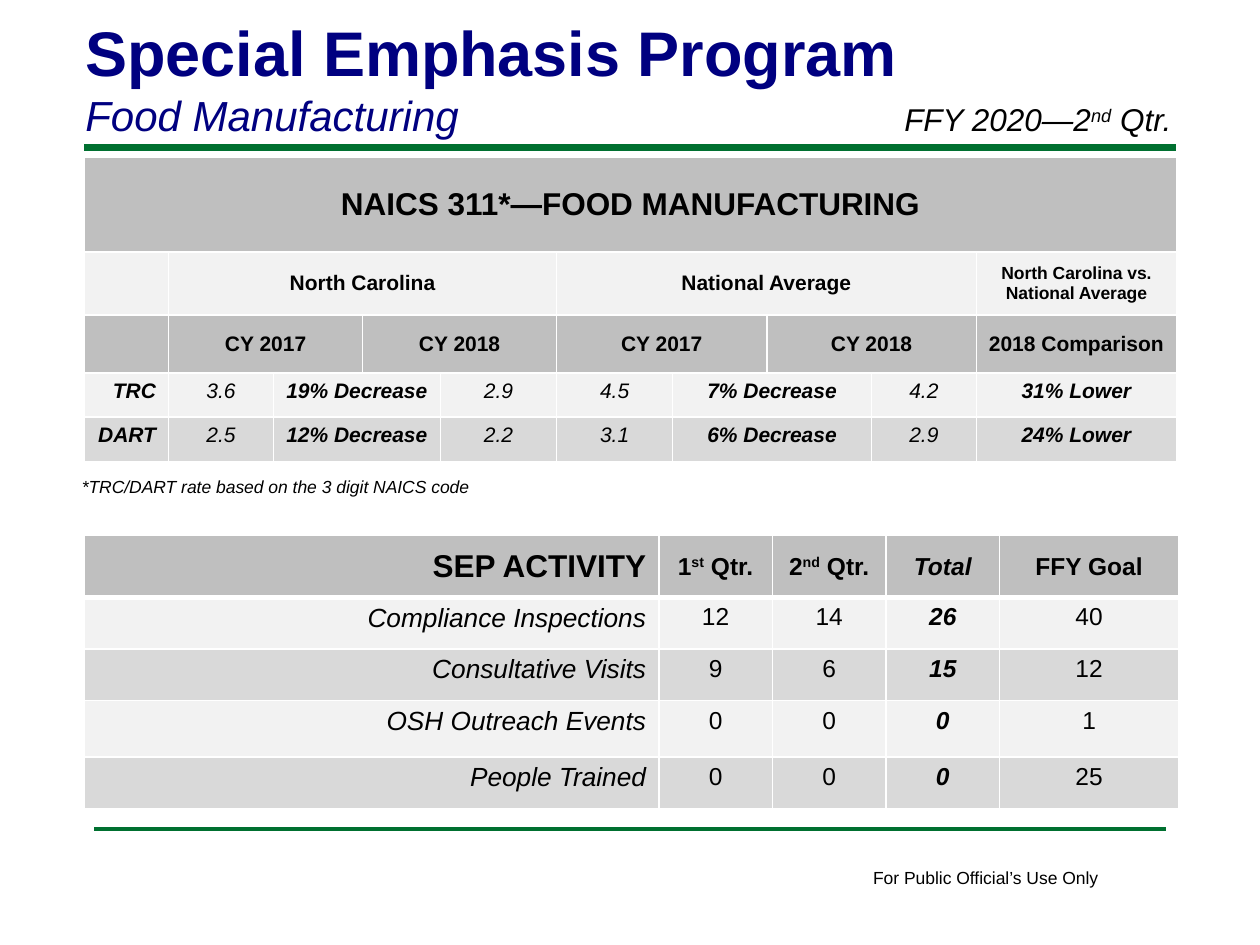
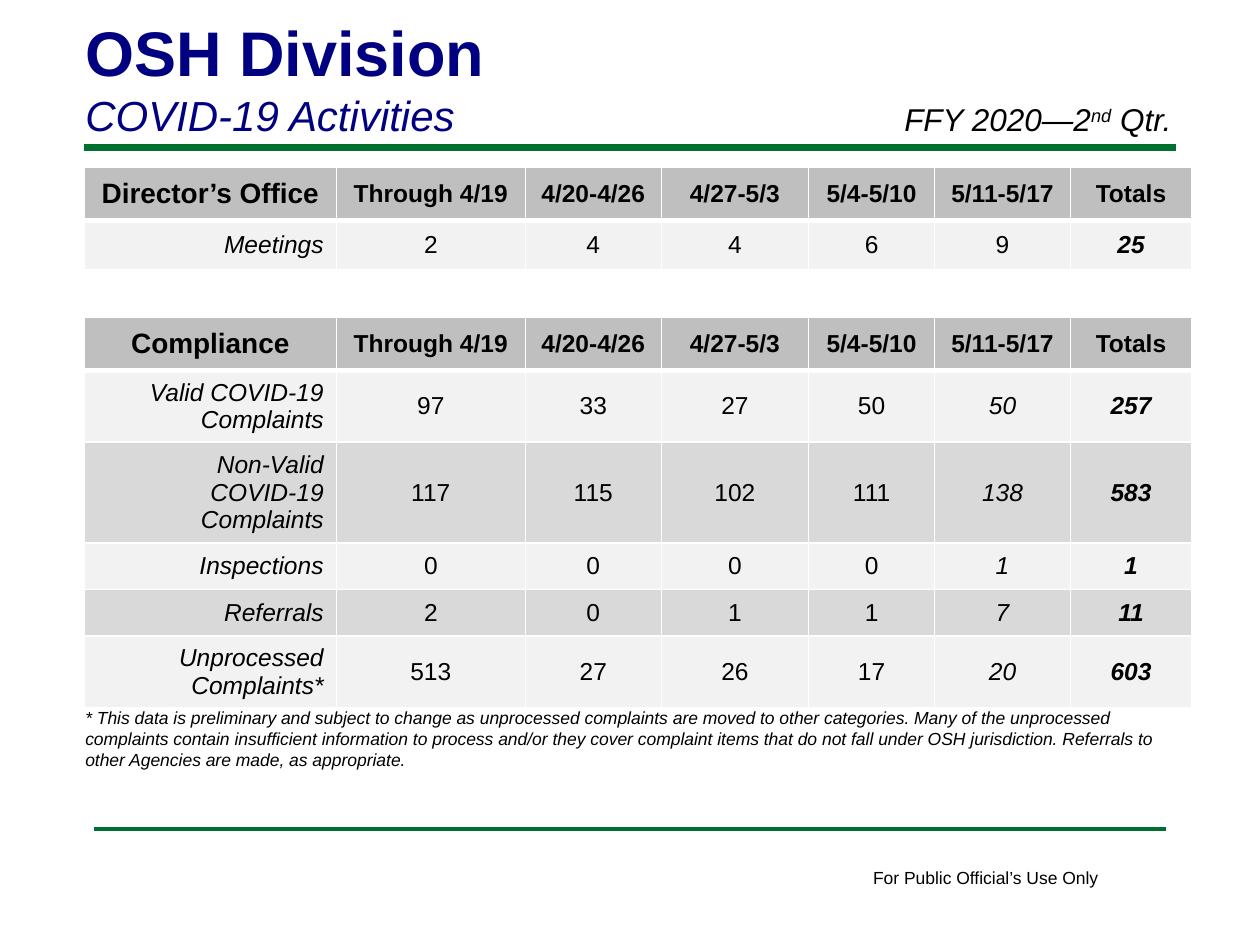
from dataclasses import dataclass
from typing import NamedTuple

from lxml import etree
from pptx import Presentation
from pptx.dml.color import RGBColor
from pptx.enum.shapes import MSO_CONNECTOR
from pptx.enum.text import MSO_ANCHOR, MSO_AUTO_SIZE, PP_ALIGN
from pptx.oxml.ns import qn
from pptx.util import Cm, Pt

LEFT, CENTER, RIGHT = PP_ALIGN.LEFT, PP_ALIGN.CENTER, PP_ALIGN.RIGHT
TOP, MIDDLE = MSO_ANCHOR.TOP, MSO_ANCHOR.MIDDLE
STRAIGHT = MSO_CONNECTOR.STRAIGHT
FIT_SHAPE = MSO_AUTO_SIZE.SHAPE_TO_FIT_TEXT

FONT = "Arial"
COLORS = {
    "ink": "000000",
    "title": "000080",
    "rule": "007030",
    "border": "FFFFFF",
    "header": "BFBFBF",
    "light": "F2F2F2",
    "dark": "D9D9D9",
}
TABLE_LEFT = 1.7


class Style(NamedTuple):
    size: float
    bold: bool = False
    italic: bool = False
    align: PP_ALIGN = LEFT
    anchor: MSO_ANCHOR = TOP
    color: str = "ink"


class Line(NamedTuple):
    """A paragraph; text between carets is superscript."""
    text: str
    style: Style


class Cell(NamedTuple):
    text: str
    style: Style
    span: int = 1


class Rule(NamedTuple):
    left: float
    right: float
    top: float
    weight: float


@dataclass
class TextBox:
    left: float
    top: float
    width: float
    height: float
    lines: list[Line]
    wrap: bool = True


@dataclass
class Grid:
    top: float
    widths: list[float]
    heights: list[float]
    fills: list[str]
    rows: list[list[Cell]]
    header_border: float = 3


# Text styles
TITLE = Style(36, bold=True, color="title")
SUBTITLE = Style(24, italic=True, color="title")
QUARTER = Style(18, italic=True)
NOTE = Style(10, italic=True)
FOOTER = Style(10)
BANNER = Style(18, bold=True, align=CENTER, anchor=MIDDLE)
GROUP = Style(12, bold=True, align=CENTER, anchor=MIDDLE)
COMPARISON = GROUP._replace(size=10)
RATE = Style(12, italic=True, align=CENTER)
CHANGE = RATE._replace(bold=True)
RATE_LABEL = CHANGE._replace(align=RIGHT)
COLUMN = Style(14, bold=True, align=CENTER, anchor=MIDDLE)
COLUMN_TOTAL = COLUMN._replace(italic=True)
ACTIVITY_HEADER = BANNER._replace(align=RIGHT)
ACTIVITY = Style(15, italic=True, align=RIGHT)
COUNT = Style(14, align=CENTER)
TOTAL = COUNT._replace(bold=True, italic=True)
OFFICE = COLUMN._replace(size=16)
COVID_LABEL = Style(14, italic=True, align=RIGHT, anchor=MIDDLE)
COVID_COUNT = COUNT._replace(anchor=MIDDLE)
COVID_LATEST = COVID_COUNT._replace(italic=True)
COVID_TOTAL = TOTAL._replace(anchor=MIDDLE)

# Parts shared by the slides
RULES = [Rule(1.7, 23.7, 2.97, 4), Rule(1.9, 23.5, 16.71, 2)]
FOOTER_BOX = TextBox(17.35, 17.35, 5.11, 0.69,
                     [Line("For Public Official’s Use Only", FOOTER)], wrap=False)
QUARTER_BOX = TextBox(17.98, 1.9, 6.35, 1.02,
                      [Line("FFY 2020—2^nd^ Qtr.", QUARTER)])


def rgb(name: str) -> RGBColor:
    return RGBColor.from_string(COLORS[name])


def write_line(paragraph, line: Line) -> None:
    style = line.style
    paragraph.alignment = style.align
    for index, piece in enumerate(line.text.split("^")):
        run = paragraph.add_run()
        run.text = piece
        font = run.font
        font.name, font.size = FONT, Pt(style.size)
        font.bold, font.italic = style.bold, style.italic
        font.color.rgb = rgb(style.color)
        if index % 2:
            run._r.get_or_add_rPr().set("baseline", "30000")


def draw_text(slide, box: TextBox) -> None:
    shape = slide.shapes.add_textbox(
        Cm(box.left), Cm(box.top), Cm(box.width), Cm(box.height))
    frame = shape.text_frame
    frame.word_wrap = box.wrap
    frame.auto_size = FIT_SHAPE
    for index, line in enumerate(box.lines):
        paragraph = frame.add_paragraph() if index else frame.paragraphs[0]
        write_line(paragraph, line)


def draw_rule(slide, rule: Rule) -> None:
    connector = slide.shapes.add_connector(
        STRAIGHT, Cm(rule.left), Cm(rule.top), Cm(rule.right), Cm(rule.top))
    connector.line.color.rgb = rgb("rule")
    connector.line.width = Pt(rule.weight)
    etree.SubElement(connector._element.spPr, qn("a:effectLst"))


def set_borders(table_cell, bottom: float) -> None:
    properties = table_cell._tc.get_or_add_tcPr()
    for side, weight in (("L", 1), ("R", 1), ("T", 1), ("B", bottom)):
        border = etree.SubElement(properties, qn(f"a:ln{side}"), w=str(Pt(weight)))
        fill = etree.SubElement(border, qn("a:solidFill"))
        etree.SubElement(fill, qn("a:srgbClr"), val=COLORS["border"])


def draw_grid(slide, grid: Grid) -> None:
    table = slide.shapes.add_table(
        len(grid.heights), len(grid.widths), Cm(TABLE_LEFT), Cm(grid.top),
        Cm(sum(grid.widths)), Cm(sum(grid.heights))).table
    table.first_row = table.horz_banding = False
    for column, width in zip(table.columns, grid.widths):
        column.width = Cm(width)
    for row_index, cells in enumerate(grid.rows):
        row = table.rows[row_index]
        row.height = Cm(grid.heights[row_index])
        for table_cell in row.cells:
            set_borders(table_cell, 1 if row_index else grid.header_border)
            table_cell.fill.solid()
            table_cell.fill.fore_color.rgb = rgb(grid.fills[row_index])
        start = 0
        for cell in cells:
            table_cell = table.cell(row_index, start)
            if cell.span > 1:
                table_cell.merge(table.cell(row_index, start + cell.span - 1))
            if cell.text:
                table_cell.vertical_anchor = cell.style.anchor
                write_line(table_cell.text_frame.paragraphs[0],
                           Line(cell.text, cell.style))
            start += cell.span


def styled_row(texts: list[str], styles: list[Style]) -> list[Cell]:
    return [Cell(text, style) for text, style in zip(texts, styles)]


def banded(count: int) -> list[str]:
    return ["header"] + [("light", "dark")[i % 2] for i in range(count)]


def add_slide(presentation, title: str, subtitle: str):
    slide = presentation.slides.add_slide(presentation.slide_layouts[6])
    for rule in RULES:
        draw_rule(slide, rule)
    heading = TextBox(1.47, 0.15, 20.96, 2.82,
                      [Line(title, TITLE), Line(subtitle, SUBTITLE)])
    for box in (FOOTER_BOX, heading, QUARTER_BOX):
        draw_text(slide, box)
    return slide


# Food manufacturing tables
def rate_row(label: str, state: list[str], nation: list[str], versus: str) -> list[Cell]:
    cells = [Cell(label, RATE_LABEL)]
    for before, change, after in (state, nation):
        cells += [Cell(before, RATE), Cell(change, CHANGE, 2), Cell(after, RATE)]
    return cells + [Cell(versus, CHANGE)]


def activity_grid() -> Grid:
    header = styled_row(
        ["SEP ACTIVITY", "1^st^ Qtr.", "2^nd^ Qtr.", "Total", "FFY Goal"],
        [ACTIVITY_HEADER, COLUMN, COLUMN, COLUMN_TOTAL, COLUMN])
    activities = [
        ["Compliance Inspections", "12", "14", "26", "40"],
        ["Consultative Visits", "9", "6", "15", "12"],
        ["OSH Outreach Events", "0", "0", "0", "1"],
        ["People Trained", "0", "0", "0", "25"],
    ]
    styles = [ACTIVITY, COUNT, COUNT, TOTAL, COUNT]
    return Grid(10.8, [11.58, 2.29, 2.29, 2.29, 3.61],
                [1.24, 1.04, 1.04, 1.14, 1.04], banded(len(activities)),
                [header] + [styled_row(texts, styles) for texts in activities])


def rate_grid() -> Grid:
    years = [Cell(year, GROUP, 2) for year in ("CY 2017", "CY 2018")]
    rows = [
        [Cell("NAICS 311*—FOOD MANUFACTURING", BANNER, 10)],
        [Cell("", GROUP), Cell("North Carolina", GROUP, 4),
         Cell("National Average", GROUP, 4),
         Cell("North Carolina vs. National Average", COMPARISON)],
        [Cell("", GROUP), *years, *years, Cell("2018 Comparison", GROUP)],
        rate_row("TRC", ["3.6", "19% Decrease", "2.9"],
                 ["4.5", "7% Decrease", "4.2"], "31% Lower"),
        rate_row("DART", ["2.5", "12% Decrease", "2.2"],
                 ["3.1", "6% Decrease", "2.9"], "24% Lower"),
    ]
    return Grid(3.18, [1.7, 2.11, 1.8, 1.57, 2.34, 2.34, 1.9, 2.11, 2.11, 4.04],
                [1.9, 1.27, 1.17, 0.89, 0.89],
                ["header", "light", "header", "light", "dark"], rows,
                header_border=1)


# Weekly COVID-19 tables
def weekly_grid(top: float, office: str, latest: Style, data: list[list[str]]) -> Grid:
    header = styled_row(
        [office, "Through 4/19", "4/20-4/26", "4/27-5/3", "5/4-5/10",
         "5/11-5/17", "Totals"], [OFFICE] + [COLUMN] * 6)
    styles = [COVID_LABEL] + [COVID_COUNT] * 4 + [latest, COVID_TOTAL]
    return Grid(top, [5.08, 3.81, 2.74, 2.97, 2.54, 2.74, 2.44],
                [1.07, 0.99] + [0.94] * (len(data) - 1), banded(len(data)),
                [header] + [styled_row(texts, styles) for texts in data])


def main() -> None:
    presentation = Presentation()
    presentation.slide_width, presentation.slide_height = Cm(25.4), Cm(19.05)

    # Slide 1: food manufacturing
    slide = add_slide(presentation, "Special Emphasis Program", "Food Manufacturing")
    draw_text(slide, TextBox(
        1.4, 9.47, 8.59, 0.69,
        [Line("*TRC/DART rate based on the 3 digit NAICS code", NOTE)], wrap=False))
    draw_grid(slide, activity_grid())
    draw_grid(slide, rate_grid())

    # Slide 2: COVID-19 activities
    slide = add_slide(presentation, "OSH Division", "COVID-19 Activities")
    draw_grid(slide, weekly_grid(3.38, "Director’s Office", COVID_COUNT, [
        ["Meetings", "2", "4", "4", "6", "9", "25"],
    ]))
    draw_grid(slide, weekly_grid(6.4, "Compliance", COVID_LATEST, [
        ["Valid COVID-19 Complaints", "97", "33", "27", "50", "50", "257"],
        ["Non-Valid COVID-19 Complaints", "117", "115", "102", "111", "138", "583"],
        ["Inspections", "0", "0", "0", "0", "1", "1"],
        ["Referrals", "2", "0", "1", "1", "7", "11"],
        ["Unprocessed Complaints*", "513", "27", "26", "17", "20", "603"],
    ]))
    draw_text(slide, TextBox(1.47, 14.12, 22.33, 1.55, [Line(
        "* This data is preliminary and subject to change as unprocessed complaints "
        "are moved to other categories. Many of the unprocessed complaints contain "
        "insufficient information to process and/or they cover complaint items that "
        "do not fall under OSH jurisdiction. Referrals to other Agencies are made, "
        "as appropriate.", NOTE)]))

    presentation.save("out.pptx")


if __name__ == "__main__":
    main()
